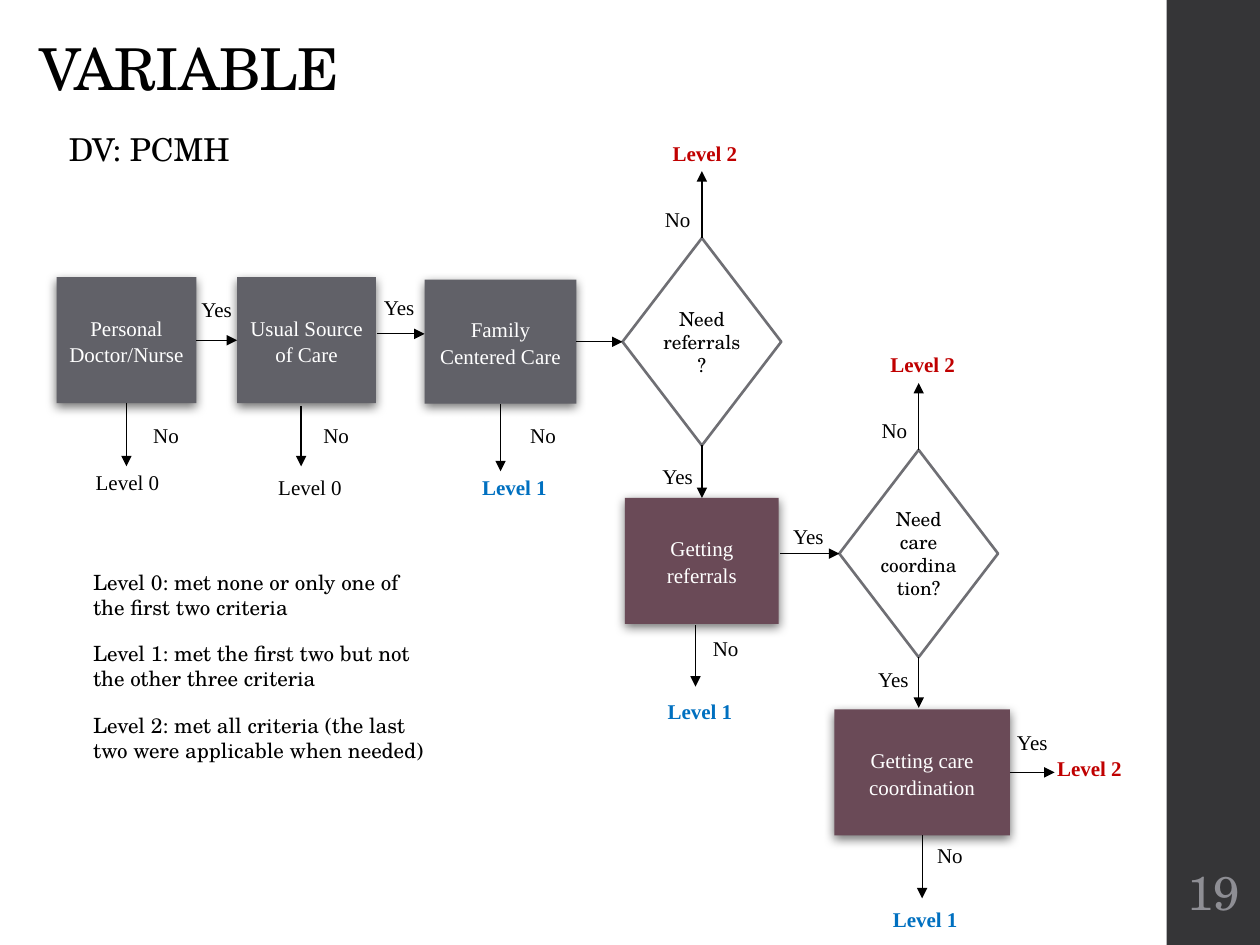
from dataclasses import dataclass

from lxml.etree import SubElement
from pptx import Presentation
from pptx.dml.color import RGBColor as Rgb
from pptx.enum.shapes import MSO_CONNECTOR as Link, MSO_SHAPE as Form
from pptx.enum.text import MSO_ANCHOR as Anchor, PP_ALIGN as Align
from pptx.oxml.ns import qn
from pptx.util import Cm, Pt


@dataclass(frozen=True)
class Theme:
    serif: str = "TeX Gyre Schola"
    roman: str = "Times New Roman"
    black: str = "000000"
    white: str = "FFFFFF"
    band: str = "353537"
    page: str = "8E8E94"
    slate: str = "616168"
    plum: str = "6A4A57"
    edge: str = "6F6F74"
    blue: str = "0070C0"
    red: str = "C00000"
    title: float = 33
    number: float = 27
    topic: float = 18
    body: float = 12
    ask: float = 11


T = Theme()
WIDE, HIGH = 25.4, 19.05
BAND = 23.52
INSET = (0.25, 0.13, 0.25, 0.13)

# Places are left, top, width, height in cm.
STEPS = {
    "doctor": ("Personal Doctor/Nurse", T.slate, (1.14, 5.59, 2.82, 2.54)),
    "usual": ("Usual Source of Care", T.slate, (4.78, 5.59, 2.8, 2.54)),
    "family": ("Family Centered Care", T.slate, (8.56, 5.64, 3.06, 2.5)),
    "refer": ("Getting referrals", T.plum, (12.6, 10.04, 3.1, 2.54)),
    "care": ("Getting care coordination", T.plum, (16.82, 14.3, 3.54, 2.54)),
}
ASKS = {
    "need refer": ("Need referrals?", (12.55, 4.8, 3.2, 4.18)),
    "need care": ("Need care coordination?", (16.92, 9.07, 3.2, 4.18)),
}

# An end is a shape with a side, or a point in cm.
TOP, LEFT, BOTTOM, RIGHT = range(4)
ARROWS = [
    (("doctor", RIGHT), ("usual", LEFT)),
    ((7.59, 6.73), (8.56, 6.73)),
    (("family", RIGHT), ("need refer", LEFT)),
    (("need refer", BOTTOM), ("refer", TOP)),
    (("need refer", TOP), (14.15, 3.45)),
    ((15.72, 11.16), ("need care", LEFT)),
    (("need care", TOP), (18.52, 7.72)),
    (("need care", BOTTOM), (18.52, 14.27)),
    (("care", RIGHT), (21.26, 15.57)),
    (("doctor", BOTTOM), (2.55, 9.4)),
    ((6.07, 8.18), (6.07, 9.4)),
    (("family", BOTTOM), (10.09, 9.5)),
    ((14.02, 12.6), (14.02, 13.84)),
    (("care", BOTTOM), (18.59, 18.11)),
]

SIDE, MID = Align.LEFT, Align.CENTER
LABELS = [
    ("Yes", SIDE, [(3.81, 5.82, 1.27, 1.17), (7.49, 5.77, 1.32, 0.97)]),
    ("Yes", MID, [(19.69, 14.55, 2.24, 0.86), (13, 9.17, 1.32, 0.84),
                  (17.35, 13.28, 1.32, 0.84), (15.47, 10.39, 1.65, 0.81)]),
    ("No", SIDE, [(2.84, 8.36, 1.32, 1.17), (6.27, 8.36, 1.32, 1.09),
                  (10.44, 8.36, 1.32, 1.04), (14.12, 12.65, 1.32, 1.17),
                  (18.64, 16.81, 1.32, 1.17)]),
    ("No", MID, [(13, 3.99, 1.32, 1.04), (17.37, 8.26, 1.32, 1.04)]),
    ("Level 0", SIDE, [(1.68, 9.3, 2.13, 1.5), (5.36, 9.4, 2.13, 1.5)]),
    ("Level 1", SIDE, [(9.47, 9.4, 2.13, 0.97), (13.21, 13.92, 2.13, 1.35),
                       (17.75, 18.11, 2.13, 1.35)]),
    ("Level 2", SIDE, [(21.06, 15.06, 1.98, 1.5), (13.31, 2.67, 1.98, 1.5),
                       (17.7, 6.93, 1.98, 1.5)]),
]
HUES = {"Level 1": T.blue, "Level 2": T.red}
NOTES = [
    "Level 0: met none or only one of the first two criteria",
    "Level 1: met the first two but not the other three criteria",
    "Level 2: met all criteria (the last two were applicable when needed)",
]


def write(shape, lines, size, hue=T.black, face=T.serif, align=SIDE,
          anchor=Anchor.TOP, inset=INSET, space=1.0, gap=0, bold=False):
    frame = shape.text_frame
    frame.word_wrap = True
    frame.vertical_anchor = anchor
    (frame.margin_left, frame.margin_top,
     frame.margin_right, frame.margin_bottom) = map(Cm, inset)
    frame.text = "\n".join(lines)
    for i, para in enumerate(frame.paragraphs):
        para.alignment = align
        para.line_spacing = space
        para.space_before = Pt(gap if i else 0)
        font = para.font
        font.name, font.size, font.bold = face, Pt(size), bold
        font.color.rgb = Rgb.from_string(hue)
    return shape


def note(slide, place, lines, size, **style):
    return write(slide.shapes.add_textbox(*map(Cm, place)), lines, size, **style)


def block(slide, form, place, fill, edge=None):
    shape = slide.shapes.add_shape(form, *map(Cm, place))
    shape.shadow.inherit = False
    shape.fill.solid()
    shape.fill.fore_color.rgb = Rgb.from_string(fill)
    if edge:
        shape.line.color.rgb = Rgb.from_string(edge)
        shape.line.width = Pt(1.5)
    else:
        shape.line.fill.background()
    return shape


def shade(shape):
    """Give the shape a soft shadow that falls straight down."""
    effect = shape.element.spPr.find(qn("a:effectLst"))
    drop = SubElement(effect, qn("a:outerShdw"), blurRad=str(Pt(6)),
                      dist=str(Pt(2)), dir="5400000", rotWithShape="0")
    hue = SubElement(drop, qn("a:srgbClr"), val=T.black)
    SubElement(hue, qn("a:alpha"), val="55000")


def arrow(slide, nodes, start, end):
    """Draw an arrow; an end named after a shape is joined to its side."""
    spots = [(0, 0) if isinstance(e[0], str) else e for e in (start, end)]
    line = slide.shapes.add_connector(
        Link.STRAIGHT, *(Cm(v) for spot in spots for v in spot))
    for e, join in ((start, line.begin_connect), (end, line.end_connect)):
        if isinstance(e[0], str):
            join(nodes[e[0]], e[1])
    line.line.color.rgb = Rgb.from_string(T.black)
    line.line.width = Pt(0.75)
    SubElement(line.line._get_or_add_ln(), qn("a:tailEnd"), type="triangle")
    SubElement(line.element.spPr, qn("a:effectLst"))


def main():
    deck = Presentation()
    deck.slide_width, deck.slide_height = Cm(WIDE), Cm(HIGH)
    slide = deck.slides.add_slide(deck.slide_layouts[6])

    block(slide, Form.RECTANGLE, (BAND, 0, WIDE - BAND, HIGH), T.band)
    title = note(slide, (0.61, 0.33, 18.67, 1.85), ["VARIABLE"], T.title,
                 anchor=Anchor.BOTTOM, inset=(0.18, 0.1, 0.18, 0.1), space=0.9)
    run = title.text_frame.paragraphs[0].runs[0]
    run.font._element.set("spc", "-50")
    note(slide, (1.14, 2.49, 6.99, 1.02), ["DV: PCMH"], T.topic)
    note(slide, (BAND, 17.15, WIDE - BAND, 1.65), ["19"], T.number, hue=T.page,
         align=MID, anchor=Anchor.MIDDLE, inset=(0.13,) * 4)

    nodes = {}
    for name, (text, fill, place) in STEPS.items():
        nodes[name] = block(slide, Form.RECTANGLE, place, fill)
        shade(nodes[name])
        write(nodes[name], [text], T.body, hue=T.white, face=T.roman,
              align=MID, anchor=Anchor.MIDDLE, space=1.07)
    for name, (text, place) in ASKS.items():
        nodes[name] = block(slide, Form.DIAMOND, place, T.white, T.edge)
        write(nodes[name], [text], T.ask, align=MID, anchor=Anchor.MIDDLE,
              inset=(0, 0.13, 0, 0.13))
    for start, end in ARROWS:
        arrow(slide, nodes, start, end)
    for text, align, places in LABELS:
        for place in places:
            note(slide, place, [text], T.body, hue=HUES.get(text, T.black),
                 face=T.roman, align=align, space=1.07, bold=text in HUES)
    note(slide, (1.63, 11.35, 7.21, 4.19), NOTES, T.body, gap=12)

    deck.save("out.pptx")


if __name__ == "__main__":
    main()
